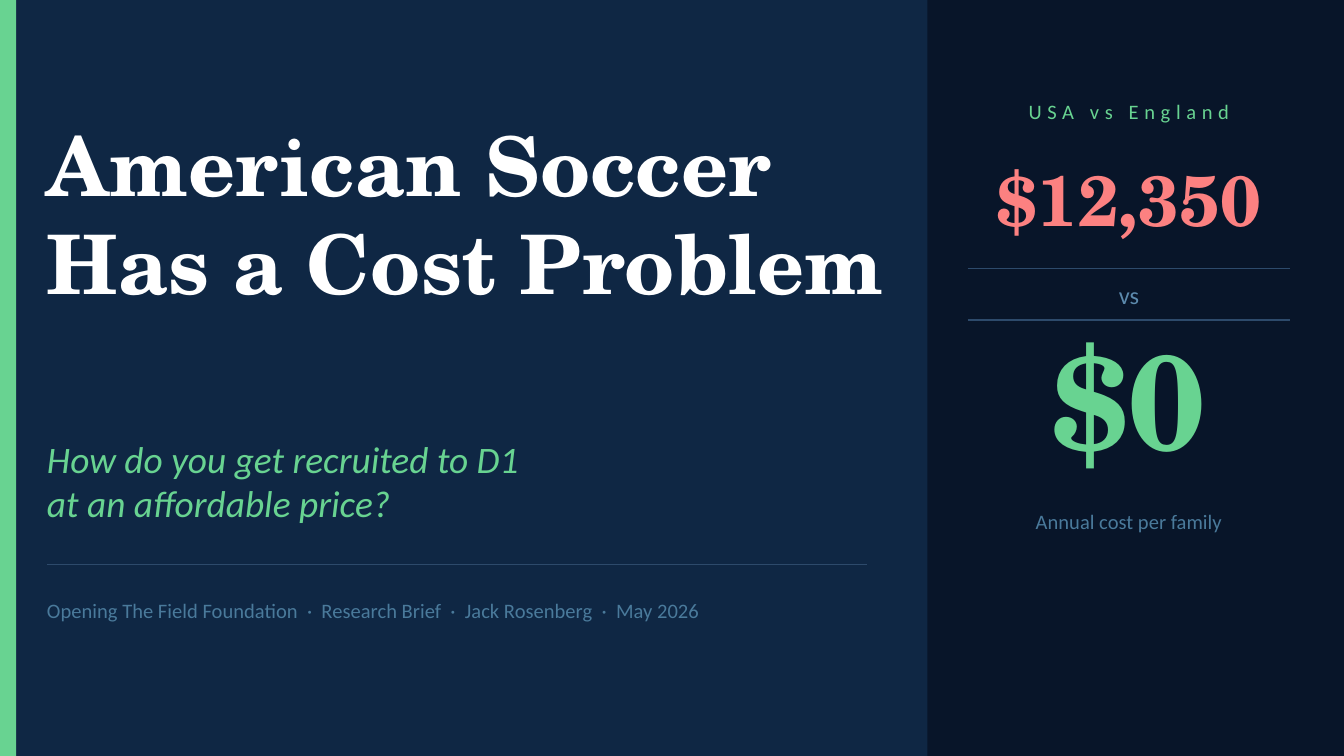
from pptx import Presentation
from pptx.dml.color import RGBColor
from pptx.enum.shapes import MSO_CONNECTOR, MSO_SHAPE
from pptx.enum.text import MSO_ANCHOR, PP_ALIGN
from pptx.oxml.ns import qn
from pptx.util import Inches, Pt

LINE, RECT = MSO_CONNECTOR.STRAIGHT, MSO_SHAPE.RECTANGLE
TOP, MIDDLE = MSO_ANCHOR.TOP, MSO_ANCHOR.MIDDLE
LEFT, CENTER = PP_ALIGN.LEFT, PP_ALIGN.CENTER
SERIF, SANS = "TeX Gyre Schola", "Calibri"
COLORS = {
    "navy": "0F2744", "panel": "081529", "green": "68D391", "coral": "FC8181",
    "white": "FFFFFF", "rule": "2D4A6B", "versus": "5C8AAD", "muted": "4A7A9B",
}

# Grid of 200 columns by 112.5 rows, each cell 0.05 inch square
CELL = Inches(0.05)
COLUMNS, ROWS = 200, 112.5
MARGIN = 7
PANEL_LEFT = 138
PANEL_TEXT_LEFT, PANEL_TEXT_WIDTH = 139, 58


def grid(*cells):
    return [round(cell * CELL) for cell in cells]


def add_text(area, lines, align, anchor, style, inset=None, spacing=None):
    box = slide.shapes.add_textbox(*grid(*area))
    frame = box.text_frame
    frame.word_wrap = True
    frame.vertical_anchor = anchor
    if inset is not None:
        for side in ("left", "top", "right", "bottom"):
            setattr(frame, f"margin_{side}", inset)
    for number, line in enumerate(lines):
        paragraph = frame.add_paragraph() if number else frame.paragraphs[0]
        paragraph.alignment = align
        run = paragraph.add_run()
        run.text = line
        for name, value in style.items():
            if name == "color":
                run.font.color.rgb = RGBColor.from_string(COLORS[value])
            else:
                setattr(run.font, name, value)
        if spacing:
            run.font._element.set("spc", str(spacing * 100))


presentation = Presentation()
presentation.slide_width, presentation.slide_height = grid(COLUMNS, ROWS)
slide = presentation.slides.add_slide(presentation.slide_layouts[6])
slide.background.fill.solid()
slide.background.fill.fore_color.rgb = RGBColor.from_string(COLORS["navy"])

# Accent stripe and comparison panel
for left, width, color in [(0, 2.4, "green"), (PANEL_LEFT, COLUMNS - PANEL_LEFT, "panel")]:
    band = slide.shapes.add_shape(RECT, *grid(left, 0, width, ROWS))
    band.shadow.inherit = False
    band.fill.solid()
    band.fill.fore_color.rgb = RGBColor.from_string(COLORS[color])
    band.line.fill.background()

# Rules around "vs" and above the credits
for start, end, row in [(144, 192, 40), (144, 192, 47.6), (MARGIN, 129, 84)]:
    rule = slide.shapes.add_connector(LINE, *grid(start, row, end, row))
    rule.line.color.rgb = RGBColor.from_string(COLORS["rule"])
    rule.line.width = Pt(0.75)
    properties = rule._element.spPr
    properties.append(properties.makeelement(qn("a:effectLst"), {}))

# Cost comparison: top row, height, text, style, letter spacing
comparison = [
    (13, 7, "USA vs England", {"name": SANS, "size": Pt(11), "color": "green"}, 3),
    (21, 17, "$12,350", {"name": SERIF, "size": Pt(38), "color": "coral", "bold": True}, None),
    (40, 7.6, "vs", {"name": SANS, "size": Pt(13), "color": "versus"}, None),
    (48, 22, "$0", {"name": SERIF, "size": Pt(72), "color": "green", "bold": True}, None),
    (73, 9, "Annual cost per family", {"name": SANS, "size": Pt(11), "color": "muted"}, None),
]
for top, height, label, style, spacing in comparison:
    area = (PANEL_TEXT_LEFT, top, PANEL_TEXT_WIDTH, height)
    add_text(area, [label], CENTER, MIDDLE, style, spacing=spacing)

# Title, question and credits: top row, width, height, lines, anchor, style
headline = [
    (17, 126, 42, ["American Soccer", "Has a Cost Problem"], TOP,
     {"name": SERIF, "size": Pt(44), "color": "white", "bold": True}),
    (63, 124, 17, ["How do you get recruited to D1", "at an affordable price?"], MIDDLE,
     {"name": SANS, "size": Pt(20), "color": "green", "italic": True}),
    (87, 126, 7.6,
     ["Opening The Field Foundation  ·  Research Brief  ·  Jack Rosenberg  ·  May 2026"], MIDDLE,
     {"name": SANS, "size": Pt(11), "color": "muted"}),
]
for top, width, height, lines, anchor, style in headline:
    add_text((MARGIN, top, width, height), lines, LEFT, anchor, style, inset=0)

presentation.save("out.pptx")
